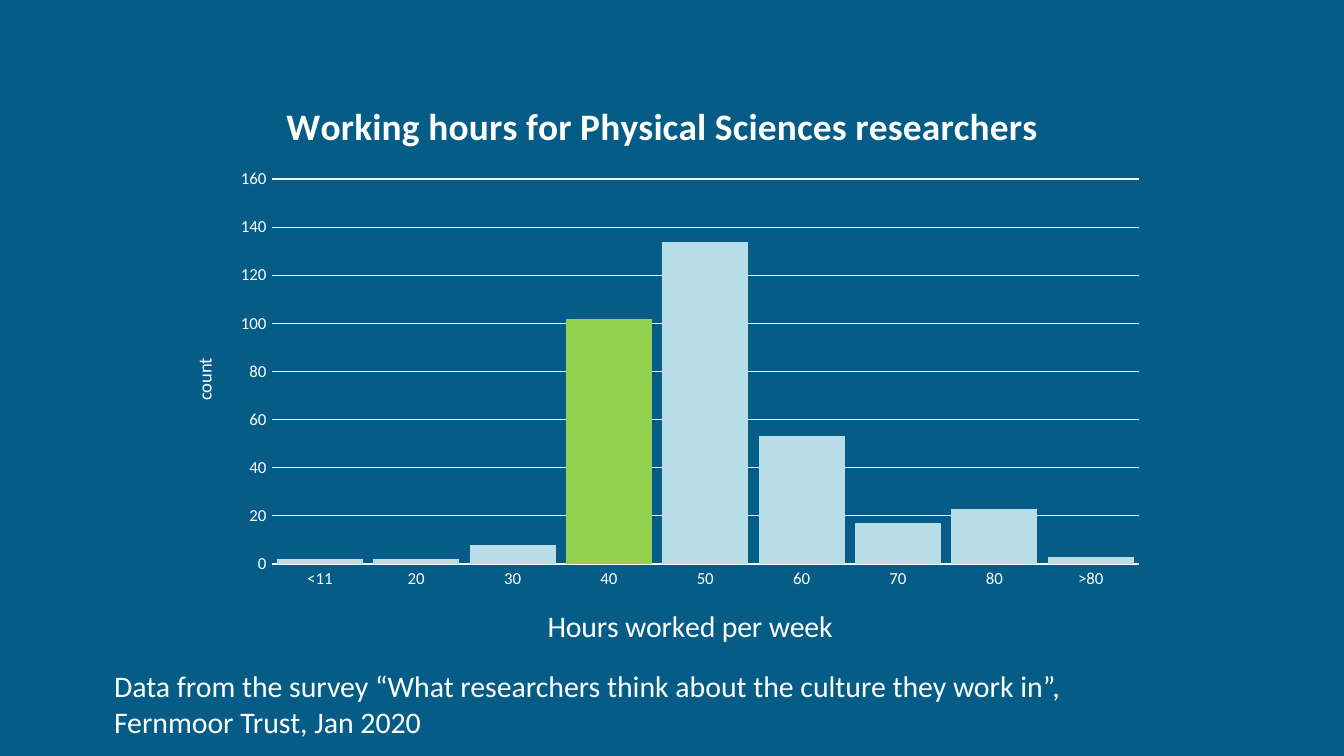
import pptx
import pptx.chart.data
import pptx.dml.color
import pptx.enum.chart
import pptx.enum.text
import pptx.oxml
import pptx.oxml.ns
import pptx.util

WIDTH = pptx.util.Inches(10)
HEIGHT = WIDTH * 9 // 16
NAVY = pptx.dml.color.RGBColor(0x05, 0x5D, 0x87)
WHITE = pptx.dml.color.RGBColor(0xFF, 0xFF, 0xFF)
PALE_BLUE = pptx.dml.color.RGBColor(0xB7, 0xDE, 0xE8)
GREEN = pptx.dml.color.RGBColor(0x92, 0xD0, 0x50)
FONT = "Calibri"

HOURS = ["<11", "20", "30", "40", "50", "60", "70", "80", ">80"]
COUNTS = [2, 2, 8, 102, 134, 53, 17, 23, 3]
HIGHLIGHT = HOURS.index("40")
SOURCE_LINES = [
    "Data from the survey “What researchers think about the culture they work in”,",
    "Fernmoor Trust, Jan 2020",
]


def percent(left, top, width, height):
    return [int(part * side / 100) for part, side in
            zip((left, top, width, height), (WIDTH, HEIGHT) * 2)]


def style_font(font, size, bold=False):
    font.name = FONT
    font.size = pptx.util.Pt(size)
    font.bold = bold
    font.color.rgb = WHITE


def style_line(line):
    line.color.rgb = WHITE
    line.width = pptx.util.Pt(0.75)


def add_run(para, text, size, bold=False):
    span = para.add_run()
    span.text = text
    style_font(span.font, size, bold)


def set_layout(parent, position, **percents):
    for old in parent.findall(pptx.oxml.ns.qn("c:layout")):
        parent.remove(old)
    modes = '<c:xMode val="edge"/><c:yMode val="edge"/>'
    if "w" in percents:
        modes = '<c:layoutTarget val="inner"/>' + modes
    values = "".join(f'<c:{key} val="{value / 100:.4f}"/>'
                     for key, value in percents.items())
    layout = pptx.oxml.parse_xml(
        f'<c:layout {pptx.oxml.ns.nsdecls("c")}><c:manualLayout>'
        f'{modes}{values}</c:manualLayout></c:layout>')
    parent.insert(position, layout)


def set_title(title, text, size, x, y, bold=False):
    add_run(title.text_frame.paragraphs[0], text, size, bold)
    set_layout(title.text_frame._txBody.getparent().getparent(), 1, x=x, y=y)


def style_axis(axis):
    axis.major_tick_mark = pptx.enum.chart.XL_TICK_MARK.NONE
    axis.minor_tick_mark = pptx.enum.chart.XL_TICK_MARK.NONE
    style_font(axis.tick_labels.font, 9)


def add_hours_chart(page):
    data = pptx.chart.data.CategoryChartData()
    data.categories = HOURS
    data.add_series("Series 1", COUNTS)
    kind = pptx.enum.chart.XL_CHART_TYPE.COLUMN_CLUSTERED
    chart = page.shapes.add_chart(kind, *percent(12.3, 10.3, 74, 79.3), data).chart
    style_font(chart.font, 10)
    chart.has_legend = False
    set_title(chart.chart_title, "Working hours for Physical Sciences researchers",
              20, 11.5, 2.5, bold=True)

    hours_axis, count_axis = chart.category_axis, chart.value_axis
    style_axis(hours_axis)
    style_line(hours_axis.format.line)
    hours_axis.has_major_gridlines = False
    set_title(hours_axis.axis_title, "Hours worked per week", 16, 37.9, 87.2)

    style_axis(count_axis)
    count_axis.format.line.fill.background()
    count_axis.minimum_scale, count_axis.maximum_scale = 0, 160
    count_axis.major_unit = 20
    style_line(count_axis.major_gridlines.format.line)
    set_title(count_axis.axis_title, "count", 10, 2.4, 46.2)

    plot = chart.plots[0]
    plot.gap_width = 12
    plot.vary_by_categories = False
    bars = plot.series[0]
    for fill, color in ((bars.format.fill, PALE_BLUE),
                        (bars.points[HIGHLIGHT].format.fill, GREEN)):
        fill.solid()
        fill.fore_color.rgb = color
    set_layout(chart._chartSpace.chart.plotArea, 0, x=10.7, y=16.9, w=87.2, h=64.2)


def add_source_note(page):
    box = page.shapes.add_textbox(*percent(7.5, 87.5, 73.9, 11.4))
    frame = box.text_frame
    frame.word_wrap = False
    frame.auto_size = pptx.enum.text.MSO_AUTO_SIZE.SHAPE_TO_FIT_TEXT
    for index, line in enumerate(SOURCE_LINES):
        para = frame.add_paragraph() if index else frame.paragraphs[0]
        add_run(para, line, 16)


def main():
    deck = pptx.Presentation()
    deck.slide_width, deck.slide_height = WIDTH, HEIGHT
    page = deck.slides.add_slide(deck.slide_layouts[6])
    page.background.fill.solid()
    page.background.fill.fore_color.rgb = NAVY
    add_hours_chart(page)
    add_source_note(page)
    deck.save("out.pptx")


if __name__ == "__main__":
    main()
